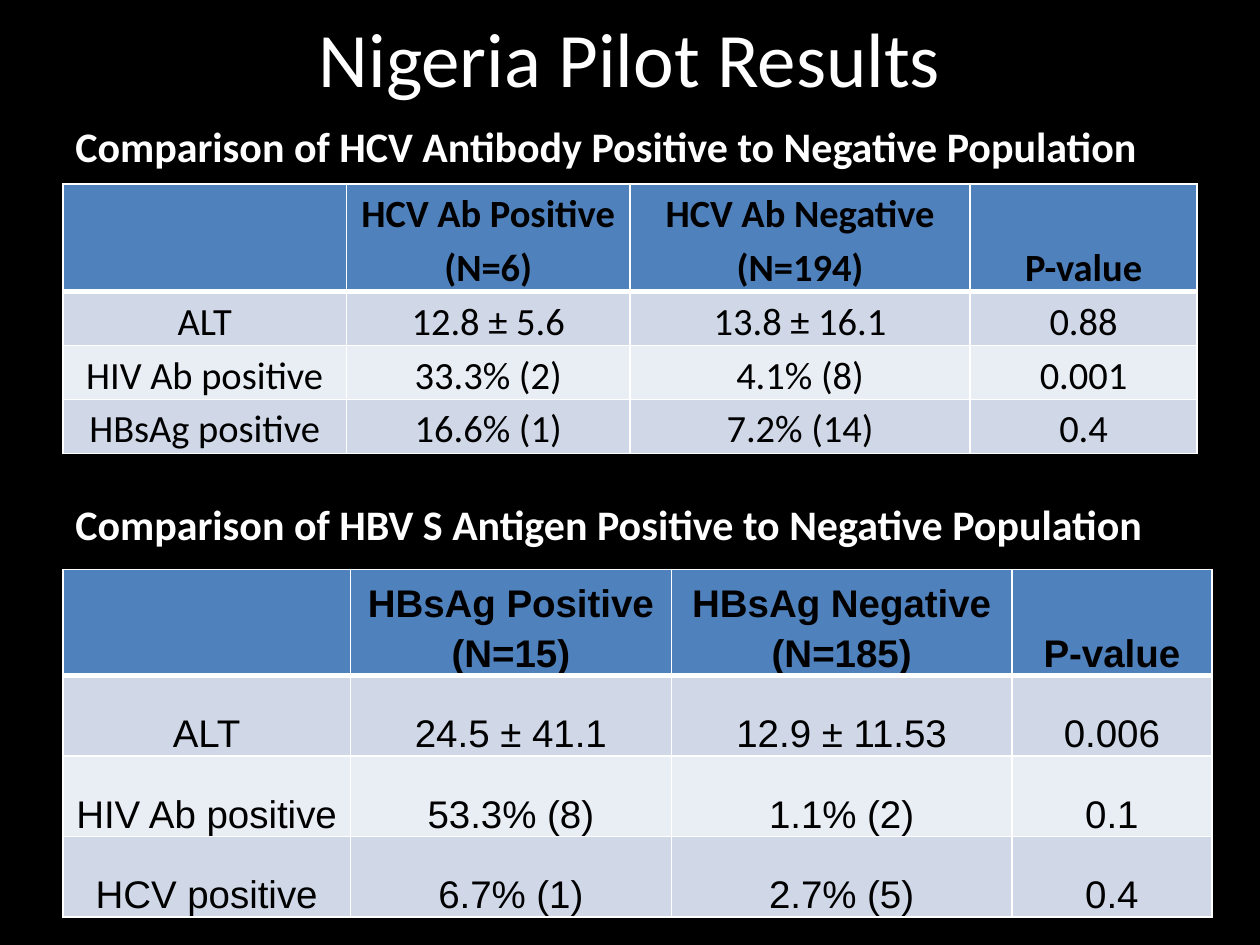
from lxml import etree
from pptx import Presentation
from pptx.dml.color import RGBColor
from pptx.enum.text import MSO_ANCHOR, MSO_AUTO_SIZE, PP_ALIGN
from pptx.oxml.ns import qn
from pptx.util import Inches, Pt

TOP, BOTTOM = MSO_ANCHOR.TOP, MSO_ANCHOR.BOTTOM
LEFT, CENTER = PP_ALIGN.LEFT, PP_ALIGN.CENTER
NO_FIT = MSO_AUTO_SIZE.NONE

COLORS = {"back": "000000", "text": "FFFFFF", "cell": "000000", "line": "FFFFFF",
          "head": "4F81BD", "odd": "D0D8E8", "even": "E9EDF4"}
EDGE = 0.5
HEAD = 0.84

HCV = [
    ["", "HCV Ab Positive\n(N=6)", "HCV Ab Negative\n(N=194)", "P-value"],
    ["ALT", "12.8 ± 5.6", "13.8 ± 16.1", "0.88"],
    ["HIV Ab positive", "33.3% (2)", "4.1% (8)", "0.001"],
    ["HBsAg positive", "16.6% (1)", "7.2% (14)", "0.4"],
]
HBV = [
    ["", "HBsAg Positive\n(N=15)", "HBsAg Negative\n(N=185)", "P-value"],
    ["ALT", "24.5 ± 41.1", "12.9 ± 11.53", "0.006"],
    ["HIV Ab positive", "53.3% (8)", "1.1% (2)", "0.1"],
    ["HCV positive", "6.7% (1)", "2.7% (5)", "0.4"],
]


def color(name):
    return RGBColor.from_string(COLORS[name])


def write(frame, text, size, tone, font="Calibri", bold=False, align=LEFT, space=None):
    """Fill a text frame, one paragraph per line."""
    for i, line in enumerate(text.split("\n")):
        para = frame.add_paragraph() if i else frame.paragraphs[0]
        para.alignment = align
        para.line_spacing = space
        run = para.add_run()
        run.text = line
        run.font.size, run.font.name, run.font.bold = Pt(size), font, bold
        run.font.color.rgb = color(tone)


def add_title(slide, text):
    title = slide.shapes.title
    title.left, title.top = Inches(EDGE), 0
    title.width, title.height = Inches(9), Inches(1.25)
    frame = title.text_frame
    frame.auto_size, frame.vertical_anchor = NO_FIT, TOP
    frame.margin_top = Inches(0.08)
    write(frame, text, 44, "text", align=CENTER)


def add_label(slide, top, width, text):
    box = slide.shapes.add_textbox(Inches(EDGE), Inches(top), Inches(width), Inches(0.91))
    box.text_frame.word_wrap = True
    write(box.text_frame, text, 24, "text", bold=True)


def add_edges(cell, widths):
    """Draw the cell borders; widths maps each side to points."""
    props = cell._tc.get_or_add_tcPr()
    for side, width in widths.items():
        line = etree.SubElement(props, qn(f"a:ln{side}"), w=str(Pt(width)))
        fill = etree.SubElement(line, qn("a:solidFill"))
        etree.SubElement(fill, qn("a:srgbClr"), val=COLORS["line"])


def style_cell(cell, row, text, font):
    cell.vertical_anchor = BOTTOM
    cell.margin_left = cell.margin_right = Inches(0.07)
    cell.margin_top = cell.margin_bottom = 0
    add_edges(cell, {"L": 1, "R": 1, "T": 3 if row == 1 else 1, "B": 1 if row else 3})
    cell.fill.solid()
    cell.fill.fore_color.rgb = color("head" if row == 0 else "odd" if row % 2 else "even")
    if text:
        write(cell.text_frame, text, 22, "cell", font, row == 0, CENTER, 1.15)


def add_grid(slide, top, cols, step, font, data):
    heights = [HEAD] + [step] * (len(data) - 1)
    table = slide.shapes.add_table(len(data), len(cols), Inches(EDGE), Inches(top),
                                   Inches(sum(cols)), Inches(sum(heights))).table
    for col, width in zip(table.columns, cols):
        col.width = Inches(width)
    for r, (line, height) in enumerate(zip(data, heights)):
        table.rows[r].height = Inches(height)
        for c, text in enumerate(line):
            style_cell(table.cell(r, c), r, text, font)


def main():
    deck = Presentation()
    deck.slide_width, deck.slide_height = Inches(10), Inches(7.5)
    slide = deck.slides.add_slide(deck.slide_layouts[5])
    slide.background.fill.solid()
    slide.background.fill.fore_color.rgb = color("back")

    add_title(slide, "Nigeria Pilot Results")

    # Result tables
    add_grid(slide, 1.46, [2.25, 2.25, 2.7, 1.8], 0.42, "Calibri", HCV)
    add_grid(slide, 4.52, [2.28, 2.55, 2.7, 1.59], 0.64, "Arial", HBV)

    # Table headings
    add_label(slide, 0.91, 8.74, "Comparison of HCV Antibody Positive to Negative Population")
    add_label(slide, 3.91, 8.8, "Comparison of HBV S Antigen Positive to Negative Population")

    deck.save("out.pptx")


if __name__ == "__main__":
    main()
